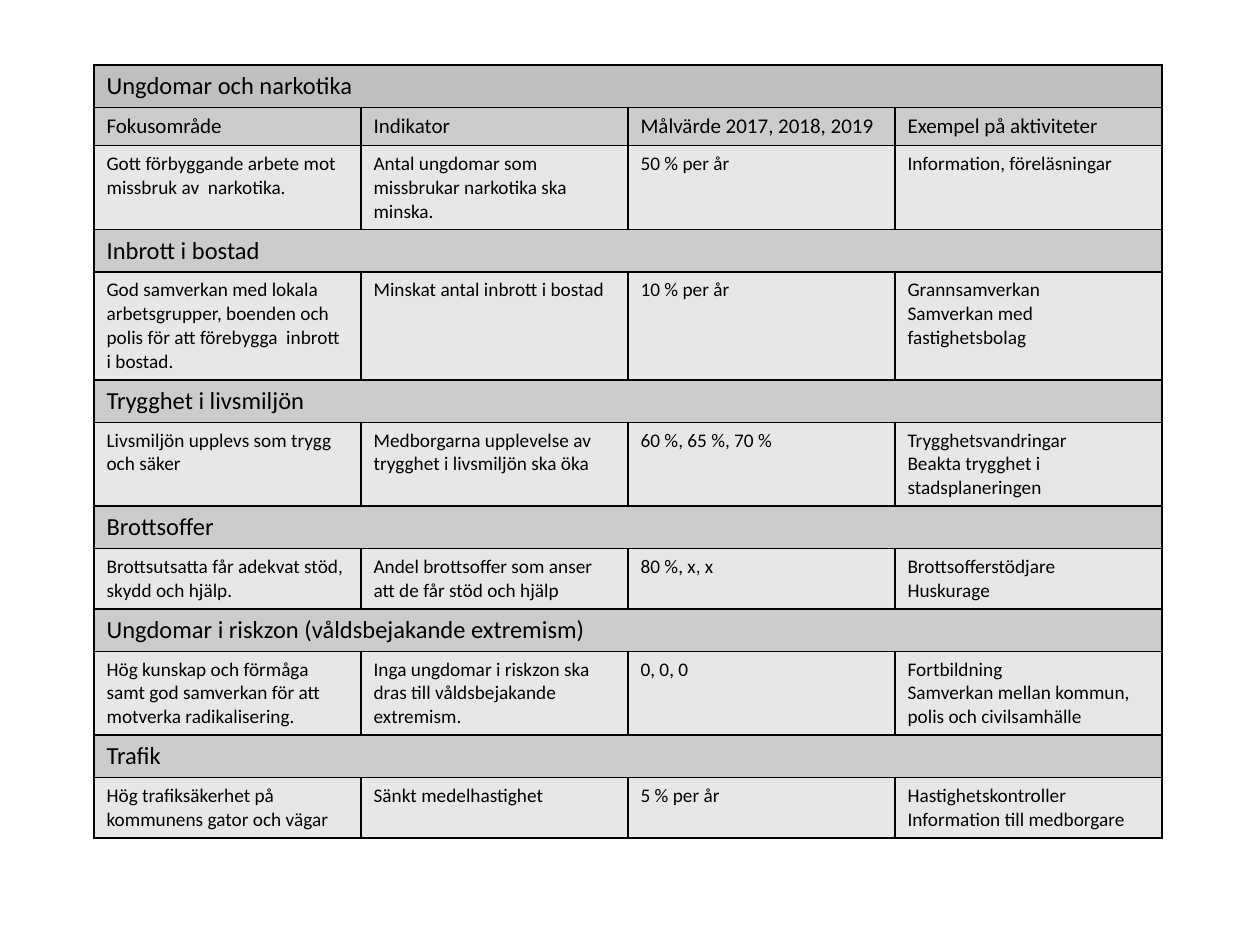
"""Builds a slide with a table of safety goals, indicators, targets and activities."""
import pptx
import pptx.dml.color
import pptx.oxml
import pptx.oxml.ns
import pptx.util

EMU_PER_PX = 914400 / 126
COLUMN_COUNT = 4
COLUMN_WIDTH = 267
SECTION_HEIGHT = 42
HEADINGS_HEIGHT = 38
LINE_HEIGHT = 24
BODY_PADDING = 11

HEADINGS = ["Fokusområde", "Indikator", "Målvärde 2017, 2018, 2019", "Exempel på aktiviteter"]
GOALS = [
    ("Ungdomar och narkotika", 3,
     ["Gott förbyggande arbete mot missbruk av  narkotika.",
      "Antal ungdomar som missbrukar narkotika ska minska.",
      "50 % per år",
      "Information, föreläsningar"]),
    ("Inbrott i bostad", 4,
     ["God samverkan med lokala arbetsgrupper, boenden och polis för att förebygga  inbrott i bostad.",
      "Minskat antal inbrott i bostad",
      "10 % per år",
      "Grannsamverkan\nSamverkan med fastighetsbolag"]),
    ("Trygghet i livsmiljön", 3,
     ["Livsmiljön upplevs som trygg och säker",
      "Medborgarna upplevelse av trygghet i livsmiljön ska öka",
      "60 %, 65 %, 70 %",
      "Trygghetsvandringar\nBeakta trygghet i stadsplaneringen"]),
    ("Brottsoffer", 2,
     ["Brottsutsatta får adekvat stöd, skydd och hjälp.",
      "Andel brottsoffer som anser att de får stöd och hjälp",
      "80 %, x, x",
      "Brottsofferstödjare\nHuskurage"]),
    ("Ungdomar i riskzon (våldsbejakande extremism)", 3,
     ["Hög kunskap och förmåga samt god samverkan för att motverka radikalisering.",
      "Inga ungdomar i riskzon ska dras till våldsbejakande extremism.",
      "0, 0, 0",
      "Fortbildning\nSamverkan mellan kommun, polis och civilsamhälle"]),
    ("Trafik", 2,
     ["Hög trafiksäkerhet på kommunens gator och vägar",
      "Sänkt medelhastighet",
      "5 % per år",
      "Hastighetskontroller\nInformation till medborgare"]),
]


def px(length):
    return pptx.util.Emu(round(length * EMU_PER_PX))


def color(hex_code):
    return pptx.dml.color.RGBColor.from_string(hex_code)


def add_borders(cell):
    properties = cell._tc.get_or_add_tcPr()
    for side in ("lnL", "lnR", "lnT", "lnB"):
        properties.append(pptx.oxml.parse_xml(
            f'<a:{side} {pptx.oxml.ns.nsdecls("a")} w="12700"><a:solidFill>'
            f'<a:srgbClr val="000000"/></a:solidFill></a:{side}>'))


def fill_cell(cell, text, size, background):
    add_borders(cell)
    cell.fill.solid()
    cell.fill.fore_color.rgb = color(background)
    cell.text_frame.text = text
    for paragraph in cell.text_frame.paragraphs:
        paragraph.font.size = pptx.util.Pt(size)
        for run in paragraph.runs:
            run.font.size = pptx.util.Pt(size)
            run.font.name = "Calibri"
            run.font.color.rgb = color("000000")


def fill_row(table, index, texts, height, size, background):
    table.rows[index].height = px(height)
    for cell, text in zip(table.rows[index].cells, texts):
        fill_cell(cell, text, size, background)


def fill_section(table, index, title, background):
    titles = [title] + [""] * (COLUMN_COUNT - 1)
    fill_row(table, index, titles, SECTION_HEIGHT, 14, background)
    table.cell(index, 0).merge(table.cell(index, COLUMN_COUNT - 1))


def add_goal_table(slide):
    row_count = 2 * len(GOALS) + 1
    frame = slide.shapes.add_table(row_count, COLUMN_COUNT, px(94), px(65),
                                   px(COLUMN_COUNT * COLUMN_WIDTH), px(770))
    table = frame.table
    table.first_row = False
    table.horz_banding = False
    for column in table.columns:
        column.width = px(COLUMN_WIDTH)
    row = 0
    for title, line_count, texts in GOALS:
        fill_section(table, row, title, "CCCCCC" if row else "BFBFBF")
        if row == 0:
            row += 1
            fill_row(table, row, HEADINGS, HEADINGS_HEIGHT, 12, "CCCCCC")
        body_height = line_count * LINE_HEIGHT + BODY_PADDING
        fill_row(table, row + 1, texts, body_height, 11, "E7E7E7")
        row += 2


def main():
    presentation = pptx.Presentation()
    presentation.slide_width = px(1260)
    presentation.slide_height = px(945)
    slide = presentation.slides.add_slide(presentation.slide_layouts[6])
    add_goal_table(slide)
    presentation.save("out.pptx")


if __name__ == "__main__":
    main()
